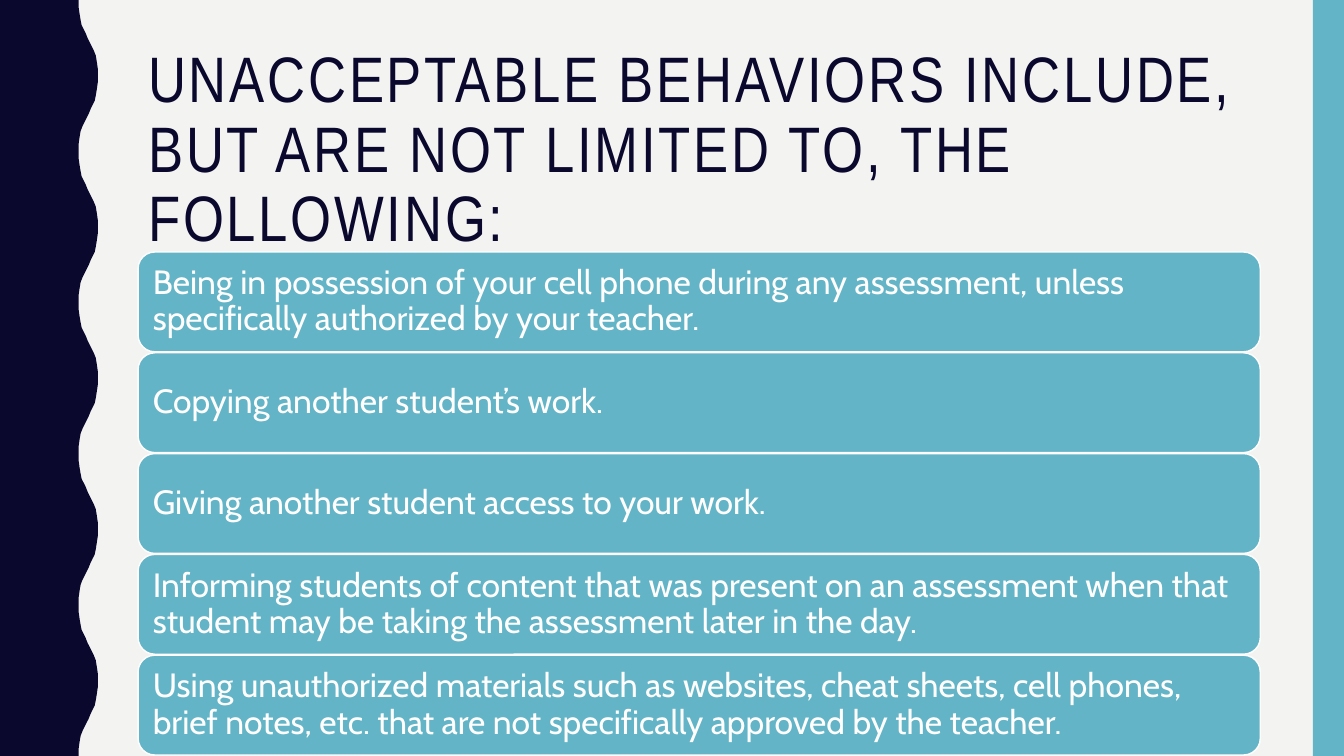
"""Build the slide on unacceptable behaviors: wavy side band, title and five stacked boxes."""
from pptx import Presentation
from pptx.dml.color import RGBColor
from pptx.enum.shapes import MSO_SHAPE as SHAPE
from pptx.enum.text import MSO_ANCHOR as ANCHOR, PP_ALIGN as ALIGN
from pptx.util import Inches, Pt

NAVY, TEAL, PAPER, WHITE = "0B082E", "62B4C6", "F3F3F2", "FFFFFF"
W, H = 13.33, 7.5
LEFT, WIDTH = 1.37, 11.13
TITLE_TOP, LIST_TOP = 0.42, 2.5
BOX_H, GAP = 0.99, 0.01
HALF_WAVE = 0.75
BEHAVIORS = [
    "Being in possession of your cell phone during any assessment, unless specifically authorized by your teacher.",
    "Copying another student’s work.",
    "Giving another student access to your work.",
    "Informing students of content that was present on an assessment when that student may be taking the assessment later in the day.",
    "Using unauthorized materials such as websites, cheat sheets, cell phones, brief notes, etc. that are not specifically approved by the teacher.",
]


def paint(fill, color):
    fill.solid()
    fill.fore_color.rgb = RGBColor.from_string(color)


def write(tf, text, font, size, color, anchor):
    tf.word_wrap = True
    tf.vertical_anchor = anchor
    p = tf.paragraphs[0]
    p.alignment = ALIGN.LEFT
    p.line_spacing = 0.9
    r = p.add_run()
    r.text = text
    r.font.name = font
    r.font.size = Pt(size)
    r.font.color.rgb = RGBColor.from_string(color)
    return r


prs = Presentation()
prs.slide_width, prs.slide_height = Inches(W), Inches(H)
s = prs.slides.add_slide(prs.slide_layouts.get_by_name("Title Only"))
paint(s.background.fill, PAPER)

bend = [(0.78, 0), (0.78, 0.07), (0.79, 0.14), (0.8, 0.2), (0.81, 0.25),
        (0.83, 0.29), (0.85, 0.33), (0.87, 0.38), (0.89, 0.42), (0.91, 0.46),
        (0.93, 0.5), (0.95, 0.55), (0.96, 0.61), (0.97, 0.68)]
edge = [(1.75 - x if half % 2 else x, half * HALF_WAVE + y)
        for half in range(10) for x, y in bend]
outline = [(Inches(x), Inches(y)) for x, y in edge + [(0.78, H), (0, H)]]
builder = s.shapes.build_freeform(0, 0)
builder.add_line_segments(outline, close=True)
wave = builder.convert_to_shape()
bar = s.shapes.add_shape(SHAPE.RECTANGLE, Inches(W - 0.31), 0, Inches(0.31), Inches(H))
for sp, color in ((wave, NAVY), (bar, TEAL)):
    sp.shadow.inherit = False
    paint(sp.fill, color)
    sp.line.fill.background()

title = s.shapes.title
title.left, title.top = Inches(LEFT), Inches(TITLE_TOP)
title.width, title.height = Inches(WIDTH), Inches(LIST_TOP - TITLE_TOP)
r = write(title.text_frame,
          "UNACCEPTABLE BEHAVIORS INCLUDE, BUT ARE NOT LIMITED TO, THE FOLLOWING:",
          "Arial Narrow", 45.9, NAVY, ANCHOR.TOP)
r.font._element.set("spc", "200")

for i, behavior in enumerate(BEHAVIORS):
    top = LIST_TOP + i * (BOX_H + GAP)
    box = s.shapes.add_shape(SHAPE.ROUNDED_RECTANGLE, Inches(LEFT), Inches(top),
                             Inches(WIDTH), Inches(BOX_H))
    box.shadow.inherit = False
    paint(box.fill, TEAL)
    paint(box.line.fill, WHITE)
    box.line.width = Pt(1)
    tf = box.text_frame
    tf.margin_left = tf.margin_right = tf.margin_top = tf.margin_bottom = Inches(0.1)
    write(tf, behavior, "Cabin", 24, WHITE, ANCHOR.MIDDLE)

prs.save("out.pptx")
